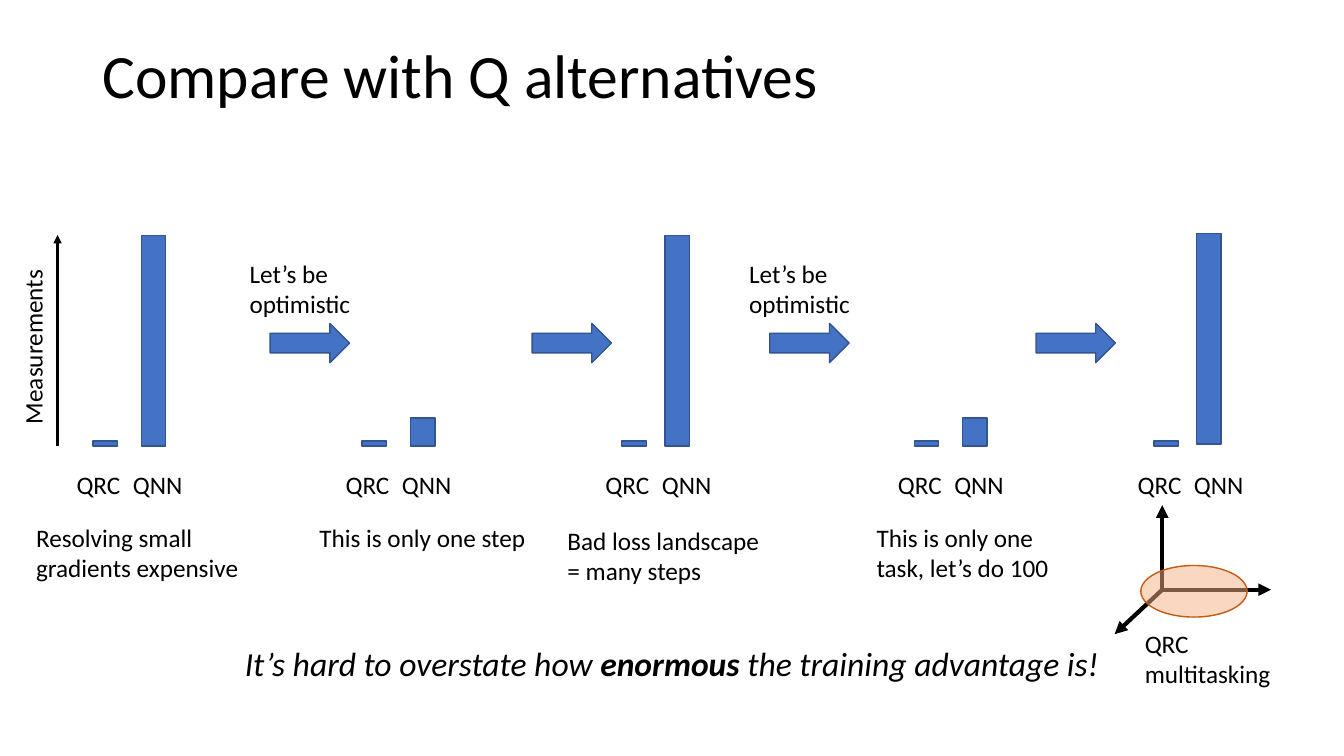
import pptx
import pptx.util
import pptx.dml.color
import pptx.enum.shapes
import pptx.enum.text
import pptx.oxml.ns
import pptx.oxml.xmlchemy

Cm = pptx.util.Cm
Pt = pptx.util.Pt
RGBColor = pptx.dml.color.RGBColor
MSO_SHAPE = pptx.enum.shapes.MSO_SHAPE
PP_ALIGN = pptx.enum.text.PP_ALIGN
OxmlElement = pptx.oxml.xmlchemy.OxmlElement
qn = pptx.oxml.ns.qn

BLACK = RGBColor(0x00, 0x00, 0x00)
BLUE = RGBColor(0x44, 0x72, 0xC4)
DARK_BLUE = RGBColor(0x32, 0x54, 0x91)
PEACH = RGBColor(0xF4, 0xB1, 0x83)
RUST = RGBColor(0xC5, 0x5A, 0x11)

FONT = "Calibri"
BASELINE = 11.24
BAR_W = 0.62
TINY, SMALL, TALL = 0.13, 0.71, 5.31


def add_text(s, x, y, w, h, runs, size=18, italic=False, align=PP_ALIGN.LEFT):
    """Add a wrapped text box from (text, bold) runs or a plain string."""
    tb = s.shapes.add_textbox(Cm(x), Cm(y), Cm(w), Cm(h))
    tf = tb.text_frame
    tf.word_wrap = True
    p = tf.paragraphs[0]
    p.alignment = align
    for text, bold in [(runs, False)] if isinstance(runs, str) else runs:
        r = p.add_run()
        r.text = text
        r.font.name = FONT
        r.font.size = Pt(size)
        r.font.bold = bold
        r.font.italic = italic
        r.font.color.rgb = BLACK
    return tb


def add_solid(s, kind, x, y, w, h, fill=BLUE, line=DARK_BLUE):
    """Add a filled, outlined preset shape without a shadow."""
    sp = s.shapes.add_shape(kind, Cm(x), Cm(y), Cm(w), Cm(h))
    sp.shadow.inherit = False
    sp.fill.solid()
    sp.fill.fore_color.rgb = fill
    sp.line.color.rgb = line
    sp.line.width = Pt(1)
    return sp


def add_arrow_line(s, x1, y1, x2, y2, width):
    """Add a straight black line with a triangle at its end."""
    c = s.shapes.add_connector(pptx.enum.shapes.MSO_CONNECTOR.STRAIGHT,
                               Cm(x1), Cm(y1), Cm(x2), Cm(y2))
    c.line.color.rgb = BLACK
    c.line.width = Pt(width)
    sp_pr = c._element.spPr
    tail = OxmlElement("a:tailEnd")
    tail.set("type", "triangle")
    sp_pr.find(qn("a:ln")).append(tail)
    sp_pr.append(OxmlElement("a:effectLst"))


def add_title(s, x, y, w, h):
    """Place the slide title."""
    tb = add_text(s, x, y, w, h, "Compare with Q alternatives", 44)
    tb.text_frame.paragraphs[0].line_spacing = 0.9


def add_bar_pair(s, x, qnn_height, qnn_dx=1.88, qnn_lift=0):
    """Draw the QRC and QNN bars with their labels, from left edge x."""
    for label, label_dx, bar_dx, height, lift in [
            ("QRC", 0, 0.66, TINY, 0),
            ("QNN", 1.42, qnn_dx, qnn_height, qnn_lift)]:
        add_solid(s, MSO_SHAPE.RECTANGLE, x + bar_dx, BASELINE - lift - height, BAR_W, height)
        add_text(s, x + label_dx, 11.71, 1.88, 1.02, label)


def add_step(s, x, note=None):
    """Draw a block arrow at left edge x with an optional note above it."""
    add_solid(s, MSO_SHAPE.RIGHT_ARROW, x, 8.15, 2, 0.99)
    if note:
        add_text(s, x - 0.77, 6.38, 3.53, 1.8, note)


def add_measurement_axis(s, x, top):
    """Draw the vertical measurement axis and its rotated title."""
    add_arrow_line(s, x, BASELINE, x, top, 1.5)
    add_text(s, x - 2.95, 8.1, 4.65, 1.02, "Measurements").rotation = 270


def add_multitasking(s, x, y):
    """Draw the three task axes from origin x, y with ellipse and caption."""
    for dx, dy in [(0, -2.13), (-1.2, 1.12), (2.74, 0)]:
        add_arrow_line(s, x, y, x + dx, y + dy, 3)
    sp = add_solid(s, MSO_SHAPE.OVAL, x - 0.54, y - 0.61, 2.68, 1.3, PEACH, RUST)
    alpha = OxmlElement("a:alpha")
    alpha.set("val", "50000")
    sp._element.spPr.find(qn("a:solidFill"))[0].append(alpha)
    add_text(s, x - 0.69, y + 0.84, 3.73, 1.8, "QRC multitasking")


def build_slide(prs):
    """Compose the comparison slide."""
    s = prs.slides.add_slide(prs.slide_layouts[6])
    add_title(s, 2.33, 1.02, 29.21, 4.45)
    add_measurement_axis(s, 1.45, 5.92)
    for x, *qnn in [(1.68, TALL), (8.46, SMALL), (15.01, TALL, 1.75),
                    (22.38, SMALL), (28.42, TALL, 1.73, 0.05)]:
        add_bar_pair(s, x, *qnn)
    optimism = "Let’s be optimistic"
    for x, note in [(6.81, optimism), (13.41, None), (19.4, optimism), (26.11, None)]:
        add_step(s, x, note)
    for x, y, w, caption in [
            (0.66, 13.03, 5.77, "Resolving small gradients expensive"),
            (7.8, 13.03, 5.77, "This is only one step"),
            (14.05, 13.11, 5.38, "Bad loss landscape = many steps"),
            (21.84, 13.03, 5.77, "This is only one task, let’s do 100")]:
        add_text(s, x, y, w, 1.8, caption)
    add_text(s, 5.36, 16.08, 23.14, 1.28,
             [("It’s hard to overstate how ", False), ("enormous ", True),
              ("the training advantage is!", False)],
             24, True, PP_ALIGN.CENTER)
    add_multitasking(s, 29.29, 14.86)


def main():
    """Create and save the presentation."""
    prs = pptx.Presentation()
    prs.slide_width = Cm(33.87)
    prs.slide_height = Cm(19.05)
    build_slide(prs)
    prs.save("out.pptx")


if __name__ == "__main__":
    main()
